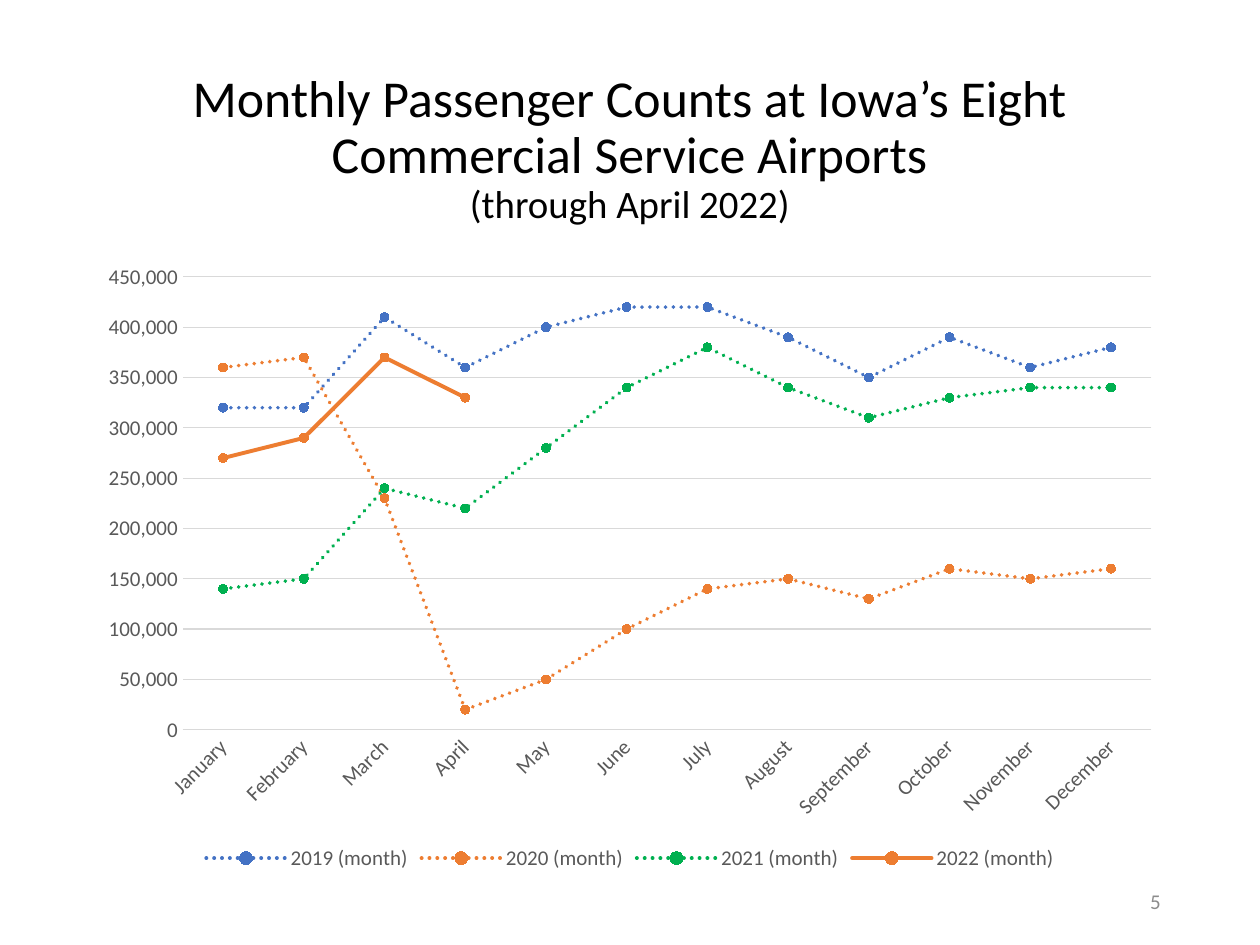
import pptx
import pptx.chart.data
import pptx.dml.color
import pptx.enum.chart
import pptx.enum.dml
import pptx.enum.text
import pptx.util

WIDE, HIGH = 10, 7.5
LEFT, SPAN = 0.69, 8.62
FONT = "Calibri"
GREY, RULE = "595959", "D9D9D9"

TITLE = [
    ("Monthly Passenger Counts at Iowa’s Eight Commercial Service Airports", 29.6),
    ("(through April 2022)", 22.2),
]
PAGE = "5"
MONTHS = ["January", "February", "March", "April", "May", "June", "July",
          "August", "September", "October", "November", "December"]
UNIT = 10000
# name, colour, dotted, passengers in units of 10,000
YEARS = [
    ("2019 (month)", "4472C4", True,
     [32, 32, 41, 36, 40, 42, 42, 39, 35, 39, 36, 38]),
    ("2020 (month)", "ED7D31", True,
     [36, 37, 23, 2, 5, 10, 14, 15, 13, 16, 15, 16]),
    ("2021 (month)", "00B050", True,
     [14, 15, 24, 22, 28, 34, 38, 34, 31, 33, 34, 34]),
    ("2022 (month)", "ED7D31", False, [27, 29, 37, 33]),
]


def color(code):
    return pptx.dml.color.RGBColor.from_string(code)


def style(font, size, code):
    font.name = FONT
    font.size = pptx.util.Pt(size)
    font.color.rgb = color(code)


def stroke(line, code, width):
    line.color.rgb = color(code)
    line.width = pptx.util.Pt(width)


def box(left, top, width, height):
    return [pptx.util.Inches(n) for n in (left, top, width, height)]


def add_title(slide):
    title = slide.shapes.title
    title.left, title.top, title.width, title.height = box(LEFT, 0.4, SPAN, 1.45)
    frame = title.text_frame
    frame.word_wrap = True
    frame.auto_size = pptx.enum.text.MSO_AUTO_SIZE.NONE
    frame.vertical_anchor = pptx.enum.text.MSO_ANCHOR.BOTTOM
    for i, (text, size) in enumerate(TITLE):
        para = frame.add_paragraph() if i else frame.paragraphs[0]
        para.alignment = pptx.enum.text.PP_ALIGN.CENTER
        para.line_spacing = 0.9
        para.space_before = pptx.util.Pt(0)
        run = para.add_run()
        run.text = text
        style(run.font, size, "000000")


def add_page(slide):
    width = 2.25
    note = slide.shapes.add_textbox(*box(LEFT + SPAN - width, 6.95, width, 0.4))
    frame = note.text_frame
    frame.word_wrap = True
    frame.vertical_anchor = pptx.enum.text.MSO_ANCHOR.MIDDLE
    para = frame.paragraphs[0]
    para.alignment = pptx.enum.text.PP_ALIGN.RIGHT
    run = para.add_run()
    run.text = PAGE
    style(run.font, 12, "8C8C8C")


def format_axes(chart):
    none = pptx.enum.chart.XL_TICK_MARK.NONE
    months, counts = chart.category_axis, chart.value_axis
    for axis in (months, counts):
        axis.major_tick_mark = axis.minor_tick_mark = none
        style(axis.tick_labels.font, 12, GREY)
    stroke(months.format.line, RULE, 0.75)
    # Slant the month names upward by 45 degrees
    months._element.txPr.bodyPr.set("rot", "-2700000")
    counts.format.line.fill.background()
    counts.has_major_gridlines = True
    stroke(counts.major_gridlines.format.line, RULE, 0.75)
    counts.minimum_scale, counts.maximum_scale = 0, 450000
    counts.major_unit = 50000
    counts.tick_labels.number_format = "#,##0"
    counts.tick_labels.number_format_is_linked = False


def format_series(line, code, dotted):
    line.smooth = False
    stroke(line.format.line, code, 2.25)
    if dotted:
        line.format.line.dash_style = pptx.enum.dml.MSO_LINE.ROUND_DOT
    # Round caps turn the short dashes into dots
    line._element.spPr.find(pptx.oxml.ns.qn("a:ln")).set("cap", "rnd")
    mark = line.marker
    mark.style = pptx.enum.chart.XL_MARKER_STYLE.CIRCLE
    mark.size = 5
    mark.format.fill.solid()
    mark.format.fill.fore_color.rgb = color(code)
    stroke(mark.format.line, code, 0.75)


def add_chart(slide):
    data = pptx.chart.data.CategoryChartData(number_format="#,##0")
    data.categories = MONTHS
    for name, _, _, counts in YEARS:
        gaps = [None] * (len(MONTHS) - len(counts))
        data.add_series(name, [n * UNIT for n in counts] + gaps)
    kind = pptx.enum.chart.XL_CHART_TYPE.LINE_MARKERS
    chart = slide.shapes.add_chart(kind, *box(LEFT, 2, SPAN, 4.95), data).chart
    style(chart.font, 10, "000000")
    chart.has_title = False
    chart.has_legend = True
    chart.legend.position = pptx.enum.chart.XL_LEGEND_POSITION.BOTTOM
    chart.legend.include_in_layout = False
    style(chart.legend.font, 12, GREY)
    format_axes(chart)
    chart.plots[0].vary_by_categories = False
    for line, (_, code, dotted, _) in zip(chart.plots[0].series, YEARS):
        format_series(line, code, dotted)


def main():
    deck = pptx.Presentation()
    deck.slide_width = pptx.util.Inches(WIDE)
    deck.slide_height = pptx.util.Inches(HIGH)
    slide = deck.slides.add_slide(deck.slide_layouts[5])
    add_chart(slide)
    add_page(slide)
    add_title(slide)
    deck.save("out.pptx")


if __name__ == "__main__":
    main()
